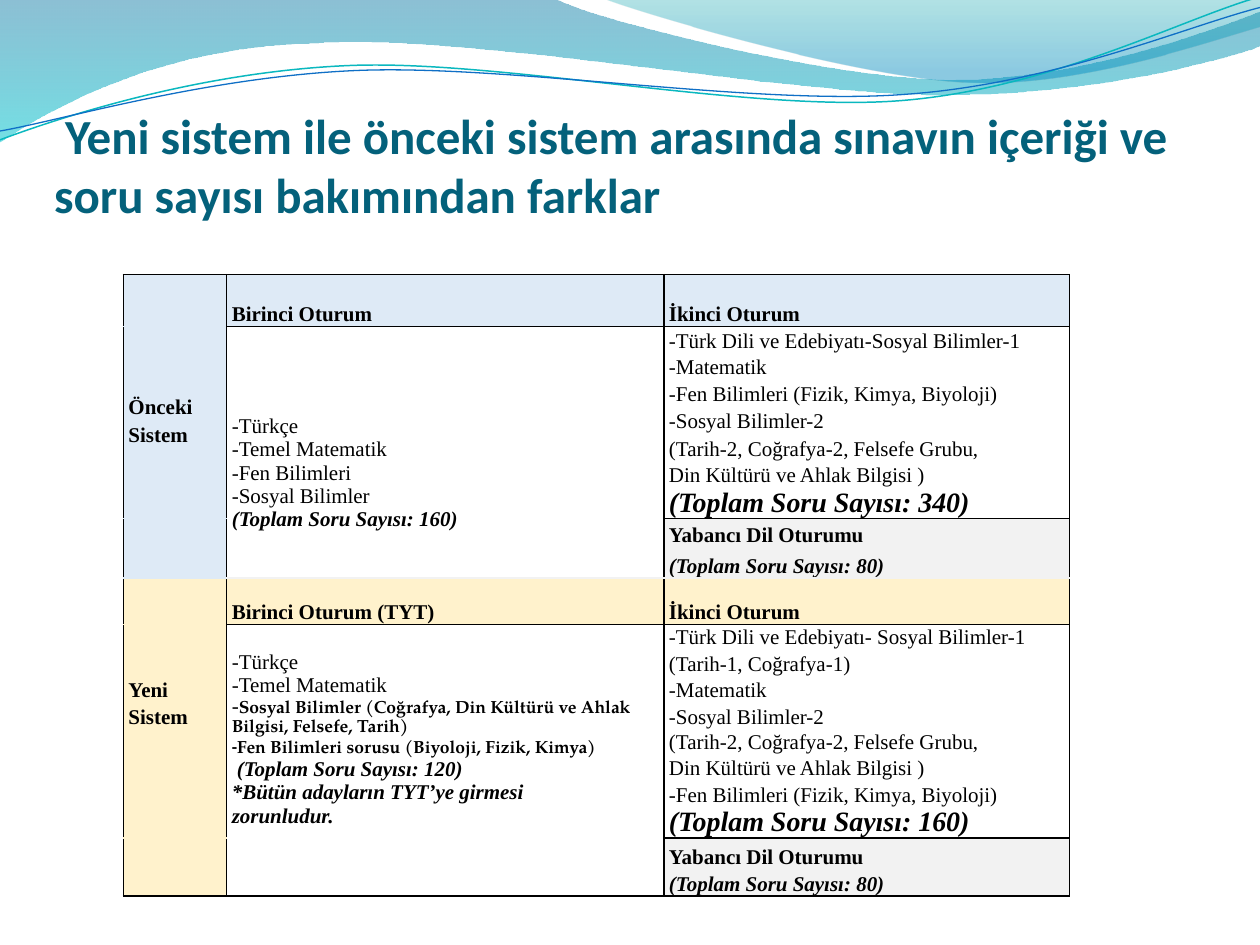
import math

from lxml import etree
from pptx import Presentation
from pptx.dml.color import RGBColor
from pptx.enum.text import MSO_ANCHOR, PP_ALIGN
from pptx.oxml.ns import qn
from pptx.util import Inches, Pt

BOTTOM = MSO_ANCHOR.BOTTOM
LEFT = PP_ALIGN.LEFT
NO_STYLE = "{2D5ABB26-0587-4C30-8999-92F81FD0307C}"
COLORS = {
    "title": "04617B", "black": "000000", "old": "DEEAF6", "new": "FFF2CC",
    "language": "F2F2F2", "blue": "0074A1", "cyan": "00C6CF", "teal": "00A1A9",
    "sky": "008BBF", "green_line": "0AB8BF", "blue_line": "0F6FC6",
}
SERIF, PAGELLA, CALIBRI = "Times New Roman", "TeX Gyre Pagella", "Calibri"
STYLES = {
    "plain": (SERIF, 12, False, False),
    "bold": (SERIF, 12, True, False),
    "total": (SERIF, 12, True, True),
    "grand": (SERIF, 16, True, True),
    "detail": (PAGELLA, 10, True, False),
    "dash": (CALIBRI, 10, True, False),
}

prs = Presentation()
prs.slide_width, prs.slide_height = Inches(10), Inches(7.5)
slide = prs.slides.add_slide(prs.slide_layouts[5])


def draw_wave(start, segments, closed):
    nodes = [(Inches(x), Inches(y)) for segment in segments for x, y in segment]
    builder = slide.shapes.build_freeform(Inches(start[0]), Inches(start[1]))
    builder.add_line_segments(nodes, close=closed)
    wave = builder.convert_to_shape()
    wave.shadow.inherit = False
    steps = iter(list(wave.element.spPr.iter(qn("a:lnTo"))))
    for segment in segments:
        step = next(steps)
        if len(segment) == 3:
            curve = etree.Element(qn("a:cubicBezTo"))
            step.addprevious(curve)
            for control in (step, next(steps), next(steps)):
                curve.append(control[0])
                control.getparent().remove(control)
    return wave


bands = [
    ((0, 0), [[(4.4, -0.01)], [(4.76, 0.17), (6.64, 0.63), (7.58, 0.63)],
              [(8.53, 0.63), (9.58, 0.26), (10, 0.09)], [(10.01, 0.36)],
              [(9.83, 0.44), (8.7, 0.76), (7.46, 0.75)], [(6.22, 0.75), (3.82, 0.28), (2.57, 0.34)],
              [(1.29, 0.36), (0.46, 0.83), (-0.01, 1.13)], [(0, 0)]],
     [(0, "blue", 45), (1, "cyan", 55)]),
    ((4.79, -0.01), [[(5.09, 0.11), (6.82, 0.62), (7.69, 0.65)],
                     [(8.56, 0.69), (9.61, 0.32), (10, 0.21)], [(10, 0)], [(4.79, -0.01)]],
     [(0, "teal", 30), (0.8, "sky", 45)]),
]
for start, segments, stops in bands:
    band = draw_wave(start, segments, True)
    band.line.fill.background()
    band.fill.gradient()
    band.fill.gradient_angle = 270
    for stop, (position, color, opacity) in zip(band.fill.gradient_stops, stops):
        stop.position = position
        stop.color.rgb = RGBColor.from_string(COLORS[color])
    for rgb, (position, color, opacity) in zip(band.element.spPr.iter(qn("a:srgbClr")), stops):
        etree.SubElement(rgb, qn("a:alpha"), val=str(opacity * 1000))

tilt = math.radians(2.7)
ripples = [
    ([(0, 1.11), (0.48, 0.93), (1.58, 0.57), (2.77, 0.52), (3.95, 0.47), (5.93, 0.89), (7.13, 0.8),
      (8.33, 0.71), (9.38, 0.15), (9.98, -0.02)], (4.99, 0.58), "green_line", 0.85),
    ([(0, 1.04), (0.47, 0.96), (1.64, 0.61), (2.83, 0.56), (4.03, 0.51), (5.97, 0.84), (7.17, 0.75),
      (8.36, 0.67), (9.41, 0.21), (10, 0.06)], (5, 0.59), "blue_line", 0.75),
]
for nodes, (cx, cy), color, width in ripples:
    level = [(cx + (x - cx) * math.cos(tilt) - (y - cy) * math.sin(tilt),
              cy + (x - cx) * math.sin(tilt) + (y - cy) * math.cos(tilt)) for x, y in nodes]
    ripple = draw_wave(level[0], [level[i:i + 3] for i in (1, 4, 7)], False)
    ripple.rotation = 357.3
    ripple.fill.background()
    ripple.line.color.rgb = RGBColor.from_string(COLORS[color])
    ripple.line.width = Pt(width)

title = slide.shapes.title
slide.shapes.element.append(title.element)
title.left, title.top, title.width, title.height = Inches(0.43), Inches(0.52), Inches(9), Inches(1.25)
heading = title.text_frame
heading.text = " Yeni sistem ile önceki sistem arasında sınavın içeriği ve soru sayısı bakımından farklar"
heading.word_wrap = True
heading.vertical_anchor = BOTTOM
heading.margin_left = heading.margin_right = heading.margin_bottom = 0
heading.margin_top = Inches(0.05)
heading.paragraphs[0].alignment = LEFT
heading_font = heading.paragraphs[0].runs[0].font
heading_font.name, heading_font.size, heading_font.bold = CALIBRI, Pt(28), True
heading_font.color.rgb = RGBColor.from_string(COLORS["title"])

columns = [0.04, 0.78, 3.47, 0.04, 3.18]
rows = [0.41, 0.03, 0.18, 0.21, 0.21, 0.11, 0.11, 0.11, 0.11, 0.21, 0.21, 0.23, 0.24,
        0.37, 0.2, 0.21, 0.21, 0.21, 0.2, 0.21, 0.21, 0.21, 0.25, 0.21]
exams = slide.shapes.add_table(len(rows), len(columns), Inches(0.98), Inches(2.18),
                               Inches(sum(columns)), Inches(sum(rows))).table
exams.first_row = exams.horz_banding = False
exams._tbl.tblPr.find(qn("a:tableStyleId")).text = NO_STYLE
for column, width in zip(exams.columns, columns):
    column.width = Inches(width)
for row, height in zip(exams.rows, rows):
    row.height = Inches(height)

label_seams = {0: "old", 10: "old", 12: "old", 13: "new", 21: "new"}
data_seams = {12: "language"}
all_seams = {-1, 0, 10, 12, 13, 21, 23}
session_seams = {-1, 0, 12, 13, 23}
for r in range(len(rows)):
    system = "old" if r < 13 else "new"
    for c in range(len(columns)):
        cell = exams.cell(r, c)
        cell.margin_left = cell.margin_right = cell.margin_top = cell.margin_bottom = 0
        cell.vertical_anchor = BOTTOM
        etree.SubElement(cell.text_frame.paragraphs[0]._p, qn("a:endParaRPr"), sz="100")
        if c < 2 or r in (0, 13):
            shade = system
        elif c > 2 and r in (11, 12, 22, 23):
            shade = "language"
        else:
            shade = None
        if shade:
            cell.fill.solid()
            cell.fill.fore_color.rgb = RGBColor.from_string(COLORS[shade])
        else:
            cell.fill.background()
        seams = session_seams if c == 2 else all_seams
        seam_colors = label_seams if c < 2 else data_seams
        last = {1: 12, 14: 23}.get(r, r) if c == 2 else r
        edges = [("a:lnL", c in (0, 2, 3), "black"), ("a:lnR", c in (1, 2, 4), "black"),
                 ("a:lnT", r - 1 in seams, seam_colors.get(r - 1, "black")),
                 ("a:lnB", last in seams, seam_colors.get(last, "black"))]
        for index, (tag, shown, color) in enumerate(edges):
            border = etree.Element(qn(tag), w="12700")
            paint = etree.SubElement(border, qn("a:solidFill" if shown else "a:noFill"))
            if shown:
                etree.SubElement(paint, qn("a:srgbClr"), val=COLORS[color])
            cell._tc.tcPr.insert(index, border)

for first, last, c in [(1, 12, 2), (14, 23, 2), (1, 2, 4), (5, 6, 4), (7, 8, 4), (4, 5, 1), (6, 7, 1)]:
    exams.cell(first, c).merge(exams.cell(last, c))


def write_cell(r, c, lines):
    frame = exams.cell(r, c).text_frame
    for index, (runs, spacing, indent) in enumerate(lines):
        paragraph = frame.add_paragraph() if index else frame.paragraphs[0]
        if spacing:
            paragraph.line_spacing = Pt(spacing)
        paragraph._p.get_or_add_pPr().set("marL", str(Inches(indent)))
        for text, style in runs:
            run = paragraph.add_run()
            run.text = text
            run.font.name, size, run.font.bold, run.font.italic = STYLES[style]
            run.font.size = Pt(size)
            run.font.color.rgb = RGBColor.from_string(COLORS["black"])


single_lines = [
    (0, 2, "Birinci Oturum", "bold", None), (0, 4, "İkinci Oturum", "bold", None),
    (4, 1, "Önceki", "bold", None), (6, 1, "Sistem", "bold", None),
    (1, 4, "-Türk Dili ve Edebiyatı-Sosyal Bilimler-1", "plain", 12.9),
    (3, 4, "-Matematik", "plain", None),
    (4, 4, "-Fen Bilimleri (Fizik, Kimya, Biyoloji)", "plain", None),
    (5, 4, "-Sosyal Bilimler-2", "plain", None),
    (7, 4, "(Tarih-2, Coğrafya-2, Felsefe Grubu,", "plain", None),
    (9, 4, "Din Kültürü ve Ahlak Bilgisi )", "plain", 13.6),
    (10, 4, "(Toplam Soru Sayısı: 340)", "grand", None),
    (13, 2, "Birinci Oturum (TYT)", "bold", None), (13, 4, "İkinci Oturum", "bold", None),
    (16, 1, "Yeni", "bold", None), (17, 1, "Sistem", "bold", None),
    (14, 4, "-Türk Dili ve Edebiyatı- Sosyal Bilimler-1", "plain", 12.9),
    (15, 4, "(Tarih-1, Coğrafya-1)", "plain", None),
    (16, 4, "-Matematik", "plain", None),
    (17, 4, "-Sosyal Bilimler-2", "plain", 13.2),
    (18, 4, "(Tarih-2, Coğrafya-2, Felsefe Grubu,", "plain", 13.2),
    (19, 4, "Din Kültürü ve Ahlak Bilgisi )", "plain", 13.6),
    (20, 4, "-Fen Bilimleri (Fizik, Kimya, Biyoloji)", "plain", None),
    (21, 4, "(Toplam Soru Sayısı: 160)", "grand", None),
]
for r in (11, 22):
    single_lines += [(r, 4, "Yabancı Dil Oturumu", "bold", None),
                     (r + 1, 4, "(Toplam Soru Sayısı: 80)", "total", None)]
for r, c, text, style, spacing in single_lines:
    write_cell(r, c, [([(text, style)], spacing, 0.04 if c == 2 else 0)])

old_subjects = ["-Türkçe", "-Temel Matematik", "-Fen Bilimleri", "-Sosyal Bilimler"]
write_cell(1, 2, [([(subject, "plain")], 13.3, 0.04) for subject in old_subjects]
           + [([("(Toplam Soru Sayısı: 160)", "total")], 13.3, 0.04)])
write_cell(14, 2, [([(subject, "plain")], 13.3, 0.04) for subject in old_subjects[:2]] + [
    ([("-", "plain"),
      ("Sosyal Bilimler (Coğrafya, Din Kültürü ve Ahlak Bilgisi, Felsefe, Tarih)", "detail")], 10.5, 0.04),
    ([("-", "dash"), ("Fen Bilimleri sorusu (Biyoloji, Fizik, Kimya)", "detail")], 10.5, 0.04),
    ([("(Toplam Soru Sayısı: 120)", "total")], 13.3, 0.08),
    ([("*Bütün adayların TYT’ye girmesi", "total")], 13.4, 0.04),
    ([("zorunludur.", "total")], 13.4, 0.04),
])
for paragraph in exams.cell(14, 2).text_frame.paragraphs[2:4]:
    paragraph.space_before = Pt(1.5)
exams.cell(1, 2).margin_bottom = Inches(0.37)
exams.cell(14, 2).margin_bottom = Inches(0.54)

prs.save("out.pptx")
